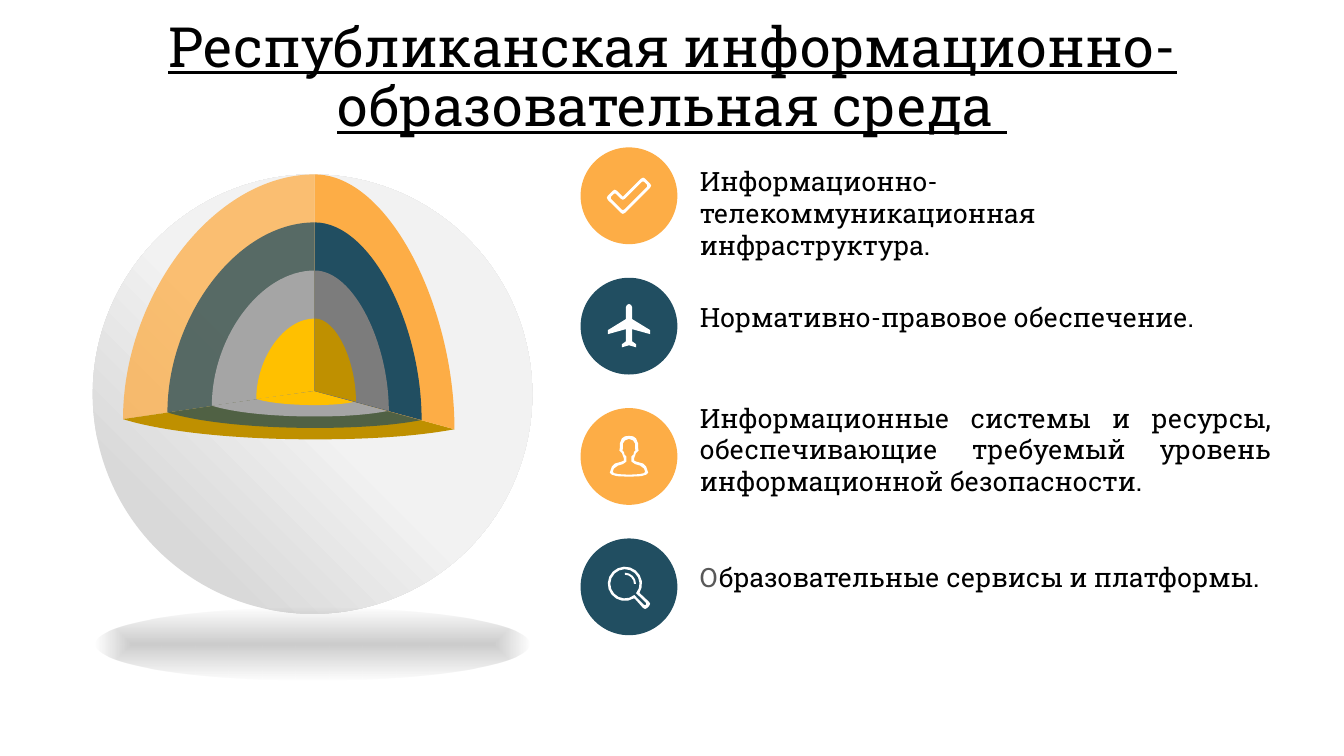
from math import cos, radians, sin

from lxml import etree
from pptx import Presentation
from pptx.dml.color import RGBColor
from pptx.enum.shapes import MSO_SHAPE as SHAPE
from pptx.enum.text import MSO_ANCHOR as ANCHOR, PP_ALIGN as ALIGN
from pptx.oxml import parse_xml
from pptx.oxml.ns import qn
from pptx.util import Inches, Pt

FONT = "Roboto Slab"
ORANGE = RGBColor(0xFD, 0xAD, 0x46)
NAVY = RGBColor(0x21, 0x4E, 0x61)
SILVER = RGBColor(0xA5, 0xA5, 0xA5)
GRAY = RGBColor(0x7C, 0x7C, 0x7C)
YELLOW = RGBColor(0xFF, 0xC0, 0x00)
OCHRE = RGBColor(0xBF, 0x90, 0x00)
TEXT_GRAY = RGBColor(0x59, 0x59, 0x59)
BLACK = RGBColor(0, 0, 0)
WHITE = RGBColor(0xFF, 0xFF, 0xFF)
DRAWING_NS = "http://schemas.openxmlformats.org/drawingml/2006/main"

prs = Presentation()
prs.slide_width, prs.slide_height = Inches(13.33), Inches(7.5)


def px(percent):
    return int(prs.slide_width * percent / 100)


def py(percent):
    return int(prs.slide_height * percent / 100)


def paint(sp, color, alpha=100):
    sp.shadow.inherit = False
    sp.line.fill.background()
    sp.fill.solid()
    sp.fill.fore_color.rgb = color
    if alpha < 100:
        clr = sp.fill._xPr.find(qn("a:solidFill"))[0]
        etree.SubElement(clr, qn("a:alpha")).set("val", str(alpha * 1000))


def paint_radial(sp, stops, kind, focus):
    """Path gradient; stops are (position, colour, alpha), focus is l, t, r, b."""
    paint(sp, WHITE)
    gs = "".join(
        f'<a:gs pos="{pos * 1000}"><a:srgbClr val="{color}">'
        f'<a:alpha val="{alpha * 1000}"/></a:srgbClr></a:gs>'
        for pos, color, alpha in stops)
    rect = " ".join(f'{side}="{v * 1000}"' for side, v in zip("ltrb", focus))
    solid = sp.fill._xPr.find(qn("a:solidFill"))
    solid.getparent().replace(solid, parse_xml(
        f'<a:gradFill xmlns:a="{DRAWING_NS}" rotWithShape="1"><a:gsLst>{gs}</a:gsLst>'
        f'<a:path path="{kind}"><a:fillToRect {rect}/></a:path></a:gradFill>'))


def add_outline(s, x, y, unit, contours, color, alpha=100, curves=0):
    """Filled outline in units from x, y; its first segments may be Bezier curves."""
    builder = None
    for contour in contours:
        pts = [(round(x + u * unit), round(y + v * unit)) for u, v in contour]
        if builder is None:
            builder = s.shapes.build_freeform(*pts[0])
        else:
            builder.move_to(*pts[0])
        builder.add_line_segments(pts[1:], close=True)
    sp = builder.convert_to_shape()
    lines = list(sp._element.iter(qn("a:lnTo")))
    for k in range(0, 3 * curves, 3):
        bezier = etree.Element(qn("a:cubicBezTo"))
        lines[k].addprevious(bezier)
        for line in lines[k:k + 3]:
            bezier.append(line[0])
            line.getparent().remove(line)
    paint(sp, color, alpha)


def arc(cx, cy, r, start, end, steps=16):
    angles = [radians(start + (end - start) * i / steps) for i in range(steps + 1)]
    return [(cx + r * cos(a), cy + r * sin(a)) for a in angles]


def mirrored(half, axis=48):
    return half + [(2 * axis - x, y) for x, y in reversed(half) if x != axis]


# Icon points on a disc 96 units wide
CHECK = [
    [(69, 40), (44, 65), (42, 66), (40, 65), (27, 52), (26, 50), (27, 48), (32, 43),
     (34, 42), (36, 43), (42, 49), (60, 31), (62, 30), (64, 31), (69, 36), (70, 38)],
    [(66, 37), (63, 34), (61, 34), (44, 51), (42, 52), (40, 51), (35, 46), (33, 46),
     (30, 49), (30, 51), (41, 62), (43, 62), (46, 59), (66, 39)]]
PLANE = [mirrored([(48, 26), (50, 27), (51, 29), (51, 41), (69, 52), (69, 56), (51, 51),
                   (51, 63), (55, 66), (55, 69), (48, 67)])]
PERSON = [
    mirrored([(48, 27.5), (52, 28), (55, 30), (57, 35), (57, 39), (57.5, 42), (55, 44.5),
              (53, 50), (53, 52), (55, 53), (62, 55), (65, 58), (67, 64), (65, 66),
              (60, 67.5), (48, 68)]),
    mirrored([(48, 30.5), (52, 32), (54, 35), (54, 40), (54.5, 42), (53, 43.5), (52.5, 46),
              (50.5, 48), (50.5, 53), (54, 55.5), (59, 57), (63, 60), (64, 63),
              (63, 64.5), (58, 65.5), (48, 66)])]
MAGNIFIER = [
    arc(44, 45, 17, 58, 392) + [(68, 63), (69, 65), (68, 67), (66, 69), (64, 70),
                                (62, 69), (54, 60)],
    arc(44, 45, 14.5, 50, 400) + [(65, 64), (65, 66), (63, 66)],
    arc(44, 45, 9, -90, 0, 4) + arc(44, 45, 11, 0, -90, 4)]


def add_title(s, x, y, w, h, text):
    tf = s.shapes.add_textbox(x, y, w, h).text_frame
    tf.word_wrap, tf.vertical_anchor = True, ANCHOR.MIDDLE
    p = tf.paragraphs[0]
    p.text, p.alignment, p.line_spacing = text, ALIGN.CENTER, 0.9
    font = p.runs[0].font
    font.name, font.size, font.underline = FONT, Pt(39.6), True
    font.color.rgb = BLACK


def add_sphere(s, x, y, size):
    """Cut-open sphere: four nested layers, each with left wall, floor and right wall."""
    unit = size / 100
    ball = s.shapes.add_shape(SHAPE.OVAL, x, y, size, size)
    paint_radial(ball, [(51, "F2F2F2", 100), (82, "D9D9D9", 100)], "circle",
                 (100, 0, 0, 100))
    cx, cy = core = 50.5, 49.3
    lefts, floors, rights = [], [], []
    for i in range(4):
        lx, ly = left = 6.9 + 10.1 * i, 55.7 - 1.53 * i
        rx, ry = right = 82.3 - 7.47 * i, 58 - 2.1 * i
        top, low = 10.93 * i, 60.3 - 2.6 * i
        lw, rw = cx - lx, rx - cx
        lefts.append([left, (lx, (ly + top) / 2), (cx - 0.53 * lw, top), (cx, top)])
        floors.append([left, (lx + 0.2 * lw, ly + 0.6 * (low - ly)),
                       (cx - 0.43 * lw, low), (cx, low), (cx + 0.39 * rw, low),
                       (cx + 0.73 * rw, ry + 0.7 * (low - ry)), right])
        rights.append([(cx, top), (cx + 0.53 * rw, top),
                       (rx, ry - 0.48 * (ry - top)), right])
    for walls, colors in (
            (lefts, [(ORANGE, 75), (NAVY, 75), (SILVER, 100), (YELLOW, 100)]),
            (floors, [(OCHRE, 100), (NAVY, 70), (SILVER, 100), (YELLOW, 100)]),
            (rights, [(ORANGE, 100), (NAVY, 100), (GRAY, 100), (OCHRE, 100)])):
        for wall, (color, alpha) in zip(walls, colors):
            add_outline(s, x, y, unit, [wall + [core]], color, alpha, len(wall) // 3)
    ground = s.shapes.add_shape(SHAPE.OVAL, int(x + 0.7 * unit), int(y + 98.6 * unit),
                                int(98.6 * unit), int(16.5 * unit))
    paint_radial(ground, [(0, "000000", 20), (100, "000000", 0)], "shape", (50,) * 4)


def add_item(s, x, y, w, disc, color, icon, shift, runs):
    """Disc with icon and the text beside it, moved down by a share of the disc."""
    paint(s.shapes.add_shape(SHAPE.OVAL, x, y, disc, disc), color)
    add_outline(s, x, y, disc / 96, icon, WHITE)
    gap = int(1.13 * disc)
    tf = s.shapes.add_textbox(x + gap, int(y + shift * disc), w - gap, disc).text_frame
    tf.word_wrap = True
    p = tf.paragraphs[0]
    p.alignment = ALIGN.JUSTIFY
    for text, text_color in runs:
        r = p.add_run()
        r.text = text
        r.font.name, r.font.size = FONT, Pt(19)
        r.font.color.rgb = text_color


def add_list(s, x, y, w, h, items):
    disc = py(12.8)
    pitch = (h - disc) / (len(items) - 1)
    for i, item in enumerate(items):
        add_item(s, x, int(y + i * pitch), w, disc, *item)


ITEMS = [
    (ORANGE, CHECK, 0.13,
     [("Информационно-телекоммуникационная инфраструктура.", BLACK)]),
    (NAVY, PLANE, 0.19, [("Нормативно-правовое обеспечение.", BLACK)]),
    (ORANGE, PERSON, -0.12,
     [("Информационные системы и ресурсы, обеспечивающие требуемый уровень "
       "информационной безопасности.", BLACK)]),
    (NAVY, MAGNIFIER, 0.18,
     [("О", TEXT_GRAY), ("бразовательные сервисы и платформы.", BLACK)]),
]

s = prs.slides.add_slide(prs.slide_layouts[6])
add_title(s, px(6.9), py(5.33), px(86.27), py(10.27),
          "Республиканская информационно-образовательная среда ")
add_sphere(s, px(6.9), py(23.07), py(58.13))
add_list(s, px(43.2), py(19.5), px(52.13), py(64.53), ITEMS)
prs.save("out.pptx")
